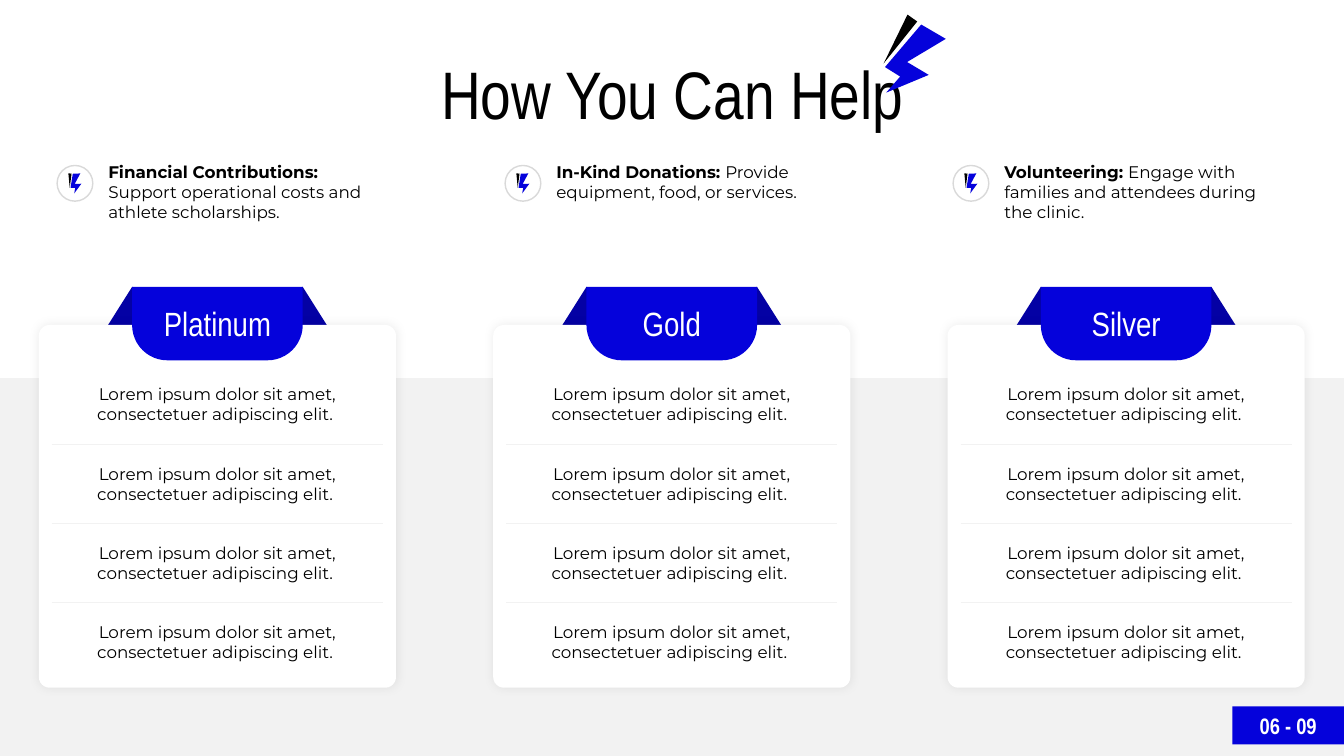
"""Build the "How You Can Help" slide."""
from lxml import etree
from pptx import Presentation
from pptx.dml.color import RGBColor
from pptx.enum import shapes, text
from pptx.oxml import ns
from pptx.util import Cm, Pt

BLUE = RGBColor(0x05, 0x02, 0xDB)
NAVY = RGBColor(0x04, 0x01, 0xA4)
BLACK = RGBColor(0, 0, 0)
WHITE = RGBColor(255, 255, 255)
PALE = RGBColor(0xF2, 0xF2, 0xF2)
GREY = RGBColor(0xD9, 0xD9, 0xD9)
HEAD, BODY = "Arial Narrow", "Montserrat"
SHAPE = shapes.MSO_SHAPE
CENTER, LEFT = text.PP_ALIGN.CENTER, text.PP_ALIGN.LEFT

WIDTH, HEIGHT = 33.87, 19.05
CARD_WIDTH = 9
LOREM = "Lorem ipsum dolor sit amet, consectetuer adipiscing elit. "
LEVELS = ["Platinum", "Gold", "Silver"]
WAYS = [
    ("Financial Contributions: ", "Support operational costs and athlete scholarships."),
    ("In-Kind Donations: ", "Provide equipment, food, or services."),
    ("Volunteering: ", "Engage with families and attendees during the clinic."),
]
BOLT = [(0.3, 0), (0.97, 0.02), (0.41, 0.52), (1, 0.54), (0.3, 1), (0.42, 0.73), (0, 0.71)]


def write(tf, content, lead="", size=12, font=BODY, color=BLACK, bold=False,
          align=CENTER, anchor=text.MSO_ANCHOR.TOP):
    """Fill a text frame with one paragraph that may open with a bold lead."""
    tf.word_wrap = True
    tf.auto_size = text.MSO_AUTO_SIZE.NONE
    tf.vertical_anchor = anchor
    p = tf.paragraphs[0]
    p.alignment = align
    for part, strong in ((lead, True), (content, bold)):
        if part:
            r = p.add_run()
            r.text = part
            r.font.name, r.font.size, r.font.bold = font, Pt(size), strong
            r.font.color.rgb = color


def add_text(slide, x, y, w, h, content, **style):
    """Add a text box."""
    tb = slide.shapes.add_textbox(Cm(x), Cm(y), Cm(w), Cm(h))
    write(tb.text_frame, content, **style)


def paint(sp, fill=None, line=None):
    """Set the fill and outline of a shape and drop its shadow."""
    sp.shadow.inherit = False
    if fill is None:
        sp.fill.background()
    else:
        sp.fill.solid()
        sp.fill.fore_color.rgb = fill
    if line is None:
        sp.line.fill.background()
    else:
        sp.line.color.rgb = line
        sp.line.width = Pt(1)
    return sp


def add_shape(slide, kind, x, y, w, h, fill=None, line=None):
    """Add a painted preset shape."""
    return paint(slide.shapes.add_shape(kind, Cm(x), Cm(y), Cm(w), Cm(h)), fill, line)


def add_outline(slide, points, fill):
    """Add a closed polygon through points given in centimetres."""
    points = [(Cm(x), Cm(y)) for x, y in points]
    fb = slide.shapes.build_freeform(*points[0])
    fb.add_line_segments(points[1:], close=True)
    return paint(fb.convert_to_shape(), fill)


def add_glow(sp):
    """Put a soft, faint shadow around a shape."""
    effects = sp._element.spPr.find(ns.qn("a:effectLst"))
    glow = etree.SubElement(effects, ns.qn("a:outerShdw"), blurRad=str(Pt(8)),
                            dist="0", dir="0", algn="ctr", rotWithShape="0")
    color = etree.SubElement(glow, ns.qn("a:srgbClr"), val=str(BLACK))
    etree.SubElement(color, ns.qn("a:alpha"), val="7000")


def add_rule(slide, x, y, w):
    """Add a thin horizontal divider."""
    cn = slide.shapes.add_connector(shapes.MSO_CONNECTOR.STRAIGHT,
                                    Cm(x), Cm(y), Cm(x + w), Cm(y))
    cn.line.color.rgb = PALE
    cn.line.width = Pt(0.5)
    etree.SubElement(cn._element.spPr, ns.qn("a:effectLst"))


def add_bolt(slide, spike_box, bolt_box, angle):
    """Draw a lightning bolt with its black spike, turned by an angle."""
    spike = add_shape(slide, SHAPE.ISOSCELES_TRIANGLE, *spike_box, fill=BLACK)
    spike.adjustments[0] = 0.75
    spike.rotation = angle + 188.3
    spike._element.spPr.xfrm.set("flipH", "1")
    x, y, w, h = bolt_box
    sp = add_outline(slide, [(x + u * w, y + v * h) for u, v in BOLT], BLUE)
    sp.rotation = angle


def add_card(slide, x, y, level):
    """Draw a sponsorship card with its ribbon and four rows."""
    mid = x + CARD_WIDTH / 2
    fold = [(-2.15, 0), (-2.92, 1.22), (2.92, 1.22), (2.15, 0), (0, 0.43)]
    add_outline(slide, [(mid + dx, y + dy) for dx, dy in fold], NAVY)
    card = add_shape(slide, SHAPE.ROUNDED_RECTANGLE, x, y + 0.96, CARD_WIDTH, 9.14, WHITE)
    card.adjustments[0] = 0.03
    add_glow(card)
    ribbon = add_shape(slide, SHAPE.ROUND_2_SAME_RECTANGLE, mid - 2.15, y, 4.3, 1.85, BLUE)
    ribbon.adjustments[0], ribbon.adjustments[1] = 0, 0.48
    add_text(slide, mid - 1.89, y + 0.29, 3.78, 1.27, level, size=24, font=HEAD, color=WHITE)
    for row in range(4):
        top = y + 2.32 + 2 * row
        add_text(slide, mid - 4.23, top, 8.46, 1.28, LOREM)
        if row < 3:
            add_rule(slide, mid - 4.17, top + 1.64, 8.34)


def add_way(slide, x, y, lead, content):
    """Draw a way to help: a ringed bolt and its text."""
    add_shape(slide, SHAPE.OVAL, x, y, 0.9, 0.9, line=GREY)
    add_bolt(slide, (x + 0.27, y + 0.2, 0.08, 0.36), (x + 0.33, y + 0.2, 0.28, 0.5), -4.1)
    add_text(slide, x + 1.04, y - 0.23, 7.37, 1.8, content, lead=lead, align=LEFT)


def add_title(slide, x, y, w, h):
    """Place and format the title with its large bolt."""
    title = slide.shapes.title
    title.left, title.top, title.width, title.height = Cm(x), Cm(y), Cm(w), Cm(h)
    write(title.text_frame, "How You Can Help", size=48, font=HEAD)
    right = x + w
    add_bolt(slide, (right - 4.02, y - 0.86, 0.3, 1.35),
             (right - 4.04, y - 0.58, 1.07, 1.93), 27.2)


def add_page_tag(slide, x, y, w, h):
    """Draw the page tag in the corner."""
    tag = add_shape(slide, SHAPE.RECTANGLE, x, y, w, h, BLUE)
    write(tag.text_frame, "06 - 09", size=16, font=HEAD, color=WHITE, bold=True,
          anchor=text.MSO_ANCHOR.MIDDLE)


def main():
    """Build and save the presentation."""
    prs = Presentation()
    prs.slide_width, prs.slide_height = Cm(WIDTH), Cm(HEIGHT)
    slide = prs.slides.add_slide(prs.slide_layouts[5])
    add_shape(slide, SHAPE.RECTANGLE, 0, HEIGHT / 2, WIDTH, HEIGHT / 2, PALE)
    for i, level in enumerate(LEVELS):
        add_card(slide, 0.98 + 11.45 * i, 7.23, level)
    for i, (lead, content) in enumerate(WAYS):
        add_way(slide, 1.44 + 11.29 * i, 4.17, lead, content)
    add_title(slide, 7.42, 1.19, 19.05, 2.31)
    add_page_tag(slide, 31.06, 17.8, 2.81, 0.96)
    prs.save("out.pptx")


if __name__ == "__main__":
    main()
